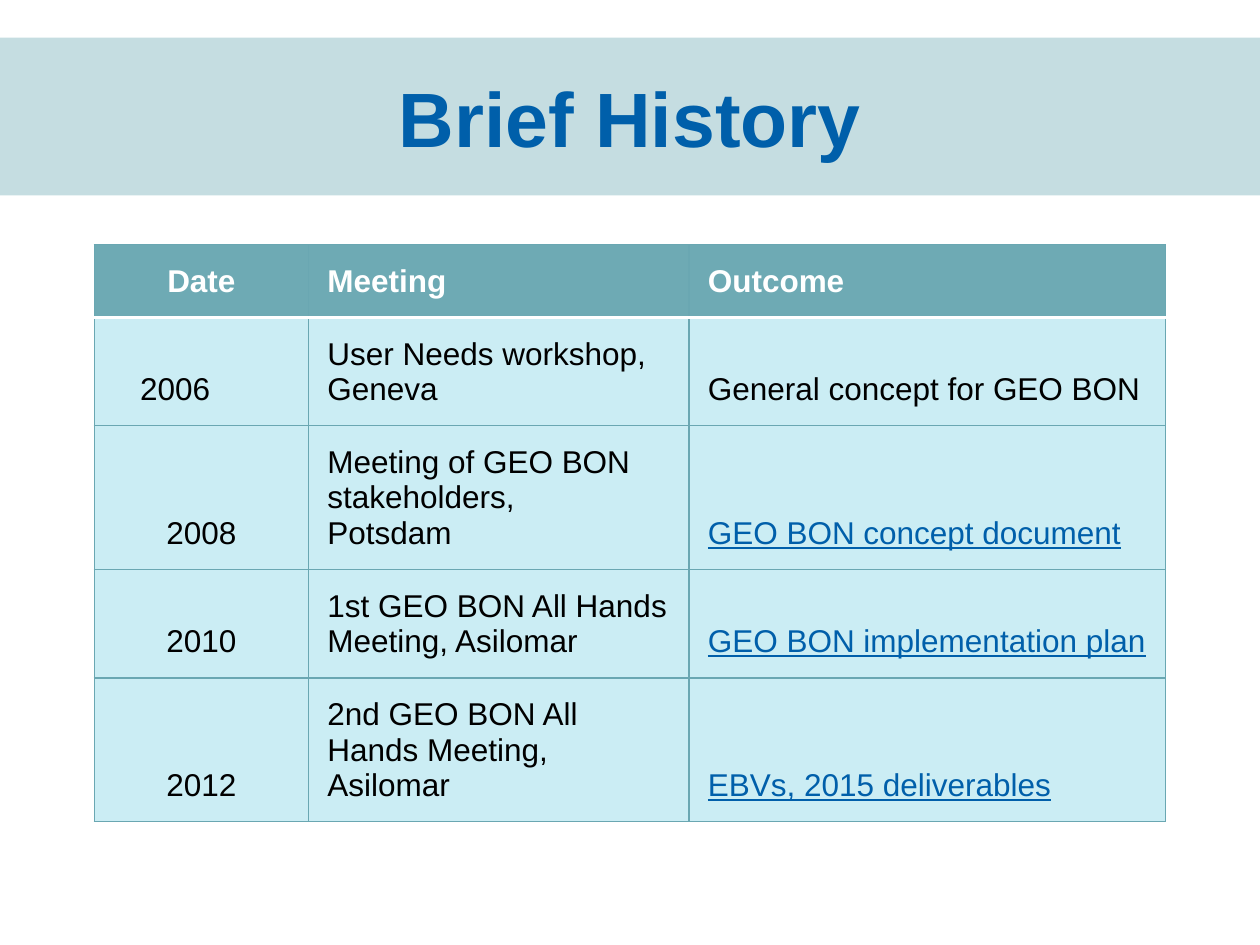
import pptx
import pptx.dml.color
import pptx.enum.text
import pptx.oxml
import pptx.oxml.ns
import pptx.util
from pptx.util import Cm, Pt

FONT = "Arial"
BLUE, BLACK, WHITE = "005FAA", "000000", "FFFFFF"
BAND, HEADER, BODY, RULE = "C5DDE1", "6EAAB4", "CBEDF4", "6AA7B2"
INSET = 0.38
COL_WIDTHS = [4.32, 7.67, 9.6]
ROW_HEIGHTS = [1.47, 2.18, 2.9, 2.18, 2.9]
ROWS = [
    ("Date", "Meeting", "Outcome"),
    ("2006", "User Needs workshop, Geneva", "General concept for GEO BON"),
    ("2008", "Meeting of GEO BON stakeholders, Potsdam", "GEO BON concept document"),
    ("2010", "1st GEO BON All Hands Meeting, Asilomar", "GEO BON implementation plan"),
    ("2012", "2nd GEO BON All Hands Meeting, Asilomar", "EBVs, 2015 deliverables"),
]
EXTRA_RIGHT = {(1, 0): 1.06, (2, 1): 0.64}


def rgb(color):
    return pptx.dml.color.RGBColor.from_string(color)


def fill(obj, color):
    obj.fill.solid()
    obj.fill.fore_color.rgb = rgb(color)


def set_font(p, size, color, bold=False):
    p.font.name = FONT
    p.font.size = Pt(size)
    p.font.bold = bold
    p.font.color.rgb = rgb(color)


def add_border(cell, side, color, width):
    ln = pptx.oxml.parse_xml(
        f'<a:ln{side} {pptx.oxml.ns.nsdecls("a")} w="{Pt(width)}">'
        f'<a:solidFill><a:srgbClr val="{color}"/></a:solidFill></a:ln{side}>'
    )
    cell._tc.get_or_add_tcPr().append(ln)


def title_band(slide, left, top, width, height):
    sp = slide.shapes.title
    sp.left, sp.top, sp.width, sp.height = Cm(left), Cm(top), Cm(width), Cm(height)
    fill(sp, BAND)
    tf = sp.text_frame
    tf.text = "Brief History"
    tf.vertical_anchor = pptx.enum.text.MSO_ANCHOR.MIDDLE
    p = tf.paragraphs[0]
    p.alignment = pptx.enum.text.PP_ALIGN.CENTER
    set_font(p, 44, BLUE, True)


def format_cell(cell, row, col, text):
    header = row == 0
    linked = row > 1 and col == 2
    for side in "LRTB":
        under_header = (row, side) in ((0, "B"), (1, "T"))
        add_border(cell, side, *((WHITE, 2) if under_header else (RULE, 0.75)))
    fill(cell, HEADER if header else BODY)
    cell.margin_left = cell.margin_top = cell.margin_bottom = Cm(INSET)
    cell.margin_right = Cm(INSET + EXTRA_RIGHT.get((row, col), 0))
    cell.vertical_anchor = pptx.enum.text.MSO_ANCHOR.BOTTOM
    cell.text = text
    p = cell.text_frame.paragraphs[0]
    align = pptx.enum.text.PP_ALIGN
    p.alignment = align.CENTER if col == 0 else align.LEFT
    p.space_after = Pt(6)
    set_font(p, 18, WHITE if header else BLUE if linked else BLACK, header)
    p.font.underline = linked


def history_table(slide, left, top):
    table = slide.shapes.add_table(
        len(ROWS), len(COL_WIDTHS), Cm(left), Cm(top),
        Cm(sum(COL_WIDTHS)), Cm(sum(ROW_HEIGHTS)),
    ).table
    for column, width in zip(table.columns, COL_WIDTHS):
        column.width = Cm(width)
    for r, (texts, height) in enumerate(zip(ROWS, ROW_HEIGHTS)):
        table.rows[r].height = Cm(height)
        for c, text in enumerate(texts):
            format_cell(table.cell(r, c), r, c, text)


def main():
    prs = pptx.Presentation()
    prs.slide_width, prs.slide_height = Cm(25.4), Cm(19.05)
    slide = prs.slides.add_slide(prs.slide_layouts[5])
    title_band(slide, 0, 0.76, 25.4, 3.18)
    history_table(slide, 1.9, 4.93)
    prs.save("out.pptx")


if __name__ == "__main__":
    main()
